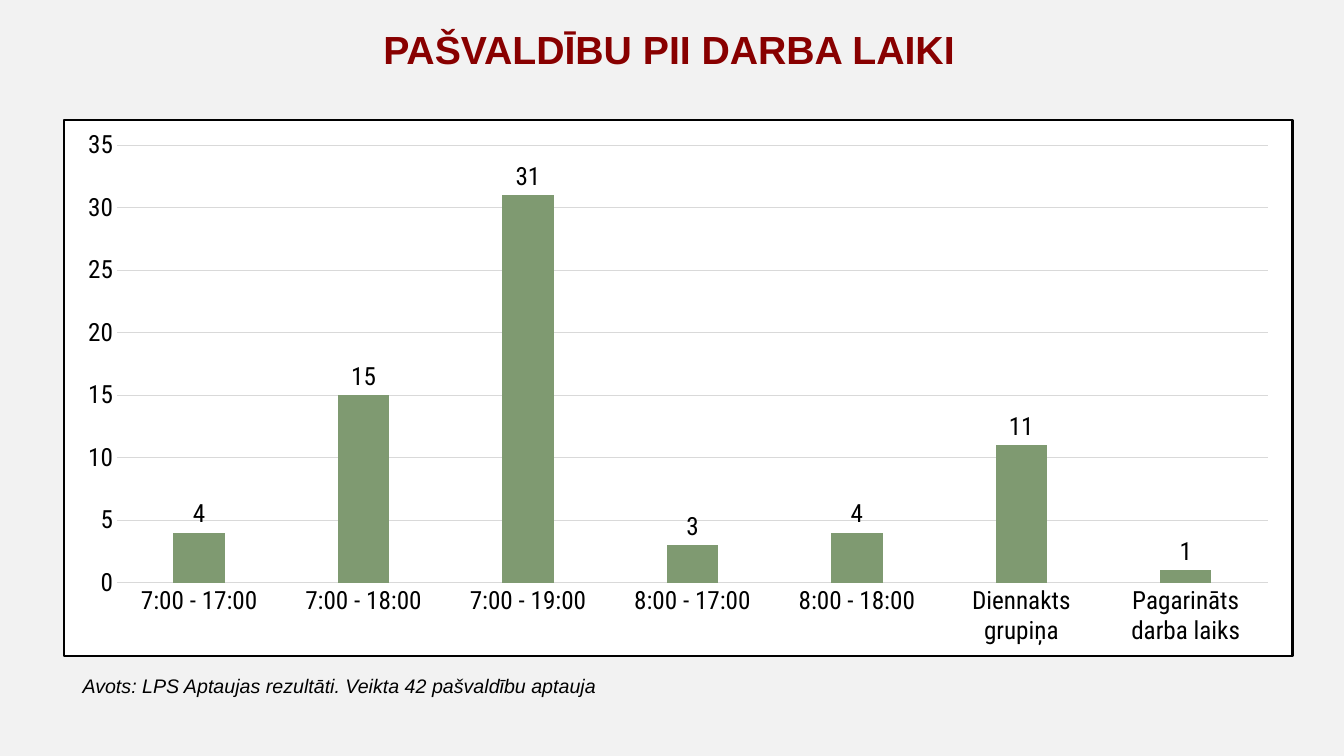
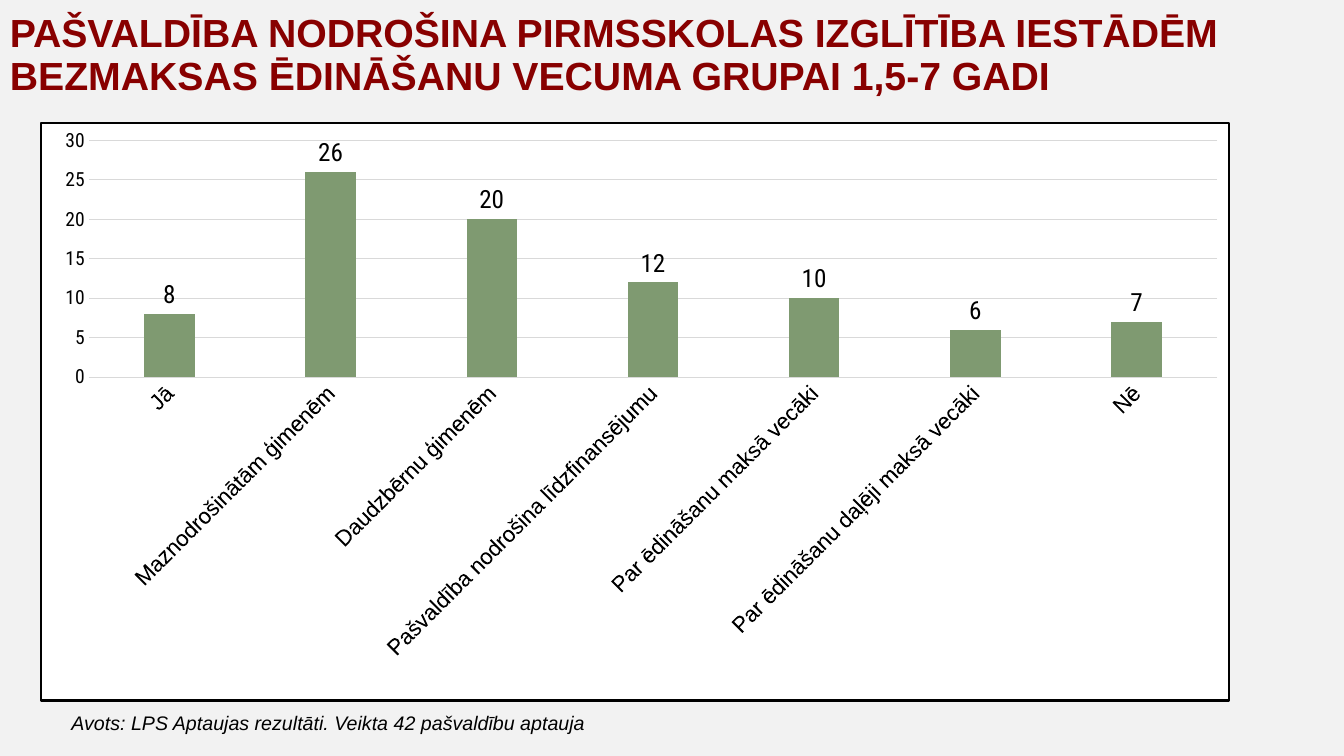
"""Build two slides of column charts on preschool survey results."""
from lxml import etree
from pptx import Presentation
from pptx.chart.data import CategoryChartData
from pptx.dml.color import RGBColor
from pptx.enum.chart import XL_CHART_TYPE, XL_LABEL_POSITION, XL_TICK_MARK
from pptx.enum.text import MSO_ANCHOR, PP_ALIGN
from pptx.oxml import parse_xml
from pptx.oxml.ns import nsdecls, qn
from pptx.util import Inches, Pt

BACKGROUND = RGBColor(0xF2, 0xF2, 0xF2)
TITLE_RED = RGBColor(0x88, 0x00, 0x00)
BLACK = RGBColor(0x00, 0x00, 0x00)
GRID_GRAY = RGBColor(0xD9, 0xD9, 0xD9)
BAR_GREEN = RGBColor(0x7F, 0x9A, 0x71)

TEXT_FONT = "Arial"
CHART_FONT = "Roboto Condensed"
CLUSTERED = XL_CHART_TYPE.COLUMN_CLUSTERED
OUTSIDE_END = XL_LABEL_POSITION.OUTSIDE_END
NO_TICK = XL_TICK_MARK.NONE
LEFT, CENTER = PP_ALIGN.LEFT, PP_ALIGN.CENTER
TOP = MSO_ANCHOR.TOP

SOURCE_NOTE = "Avots: LPS Aptaujas rezultāti. Veikta 42 pašvaldību aptauja"
WORKING_HOURS = {
    "7:00 - 17:00": 4,
    "7:00 - 18:00": 15,
    "7:00 - 19:00": 31,
    "8:00 - 17:00": 3,
    "8:00 - 18:00": 4,
    "Diennakts grupiņa": 11,
    "Pagarināts darba laiks": 1,
}
FREE_MEALS = {
    "Jā": 8,
    "Maznodrošinātām ģimenēm": 26,
    "Daudzbērnu ģimenēm": 20,
    "Pašvaldība nodrošina līdzfinansējumu": 12,
    "Par ēdināšanu maksā vecāki": 10,
    "Par ēdināšanu daļēji maksā vecāki": 6,
    "Nē": 7,
}


def style_font(font, size, name, color=BLACK):
    font.size = Pt(size)
    font.name = name
    font.color.rgb = color


def add_text(slide, box, text, size, color=BLACK, alignment=LEFT):
    shape = slide.shapes.add_textbox(*map(Inches, box))
    text_frame = shape.text_frame
    text_frame.word_wrap = True
    text_frame.vertical_anchor = TOP
    text_frame.text = text
    paragraph = text_frame.paragraphs[0]
    paragraph.alignment = alignment
    style_font(paragraph.runs[0].font, size, TEXT_FONT, color)
    return paragraph


def add_title(slide, box, text, alignment=LEFT):
    paragraph = add_text(slide, box, text, 28, TITLE_RED, alignment)
    paragraph.line_spacing = 0.9
    paragraph.runs[0].font.bold = True


def add_source_note(slide, box):
    paragraph = add_text(slide, box, SOURCE_NOTE, 14)
    paragraph.runs[0].font.italic = True


def frame_chart(chart):
    frame = parse_xml(
        f'<c:spPr {nsdecls("c", "a")}>'
        '<a:solidFill><a:srgbClr val="FFFFFF"/></a:solidFill>'
        f'<a:ln w="{Pt(1.5)}"><a:solidFill><a:srgbClr val="{BLACK}"/></a:solidFill></a:ln>'
        "</c:spPr>"
    )
    chart.element.find(qn("c:chart")).addnext(frame)


def place_plot(chart, plot_box):
    plot_area = chart.element.find(qn("c:chart")).find(qn("c:plotArea"))
    for old_layout in plot_area.findall(qn("c:layout")):
        plot_area.remove(old_layout)
    layout = parse_xml(f'<c:layout {nsdecls("c")}><c:manualLayout/></c:layout>')
    settings = [("layoutTarget", "inner"), ("xMode", "edge"), ("yMode", "edge")]
    settings += zip("xywh", plot_box)
    for tag, value in settings:
        etree.SubElement(layout[0], qn(f"c:{tag}")).set("val", str(value))
    plot_area.insert(0, layout)


def style_axes(chart, maximum, category_font, value_size, rotation):
    category_axis, value_axis = chart.category_axis, chart.value_axis
    for axis in (category_axis, value_axis):
        axis.major_tick_mark = axis.minor_tick_mark = NO_TICK
    style_font(category_axis.tick_labels.font, *category_font)
    style_font(value_axis.tick_labels.font, value_size, CHART_FONT)
    value_axis.minimum_scale = 0
    value_axis.maximum_scale = maximum
    value_axis.major_unit = 5
    value_axis.format.line.fill.background()
    for line in (category_axis.format.line, value_axis.major_gridlines.format.line):
        line.color.rgb = GRID_GRAY
        line.width = Pt(0.75)
    if rotation:
        body = category_axis._element.find(qn("c:txPr")).find(qn("a:bodyPr"))
        body.set("rot", str(rotation * 60000))
        body.set("vert", "horz")


def add_column_chart(slide, box, values, maximum, category_font, value_size,
                     rotation=0, plot_box=None):
    data = CategoryChartData()
    data.categories = list(values)
    data.add_series("Series 1", list(values.values()))
    chart = slide.shapes.add_chart(CLUSTERED, *map(Inches, box), data).chart
    chart.has_title = False
    chart.has_legend = False
    style_font(chart.font, 10, CHART_FONT)
    frame_chart(chart)
    if plot_box:
        place_plot(chart, plot_box)
    style_axes(chart, maximum, category_font, value_size, rotation)

    plot = chart.plots[0]
    plot.gap_width = 219
    plot.overlap = -27
    plot.vary_by_categories = False
    fill = plot.series[0].format.fill
    fill.solid()
    fill.fore_color.rgb = BAR_GREEN
    plot.has_data_labels = True
    labels = plot.data_labels
    labels.show_value = True
    labels.position = OUTSIDE_END
    style_font(labels.font, 18, CHART_FONT)


def add_working_hours_slide(presentation):
    slide = presentation.slides.add_slide(presentation.slide_layouts[6])
    add_title(slide, (0.91, 0.25, 11.45, 0.69), "PAŠVALDĪBU PII DARBA LAIKI", CENTER)
    add_column_chart(slide, (0.62, 1.18, 12.21, 5.34), WORKING_HOURS, 35,
                     (18, CHART_FONT), 18)
    add_source_note(slide, (0.72, 6.64, 6.05, 0.34))


def add_free_meals_slide(presentation):
    slide = presentation.slides.add_slide(presentation.slide_layouts[6])
    add_title(slide, (0, 0.09, 13.51, 1.26),
              "PAŠVALDĪBA NODROŠINA PIRMSSKOLAS IZGLĪTĪBA IESTĀDĒM "
              "BEZMAKSAS ĒDINĀŠANU VECUMA GRUPAI 1,5-7 GADI")
    add_column_chart(slide, (0.4, 1.21, 11.8, 5.75), FREE_MEALS, 30,
                     (16, TEXT_FONT), 14, rotation=-45,
                     plot_box=(0.04, 0.03, 0.95, 0.41))
    add_source_note(slide, (0.61, 7, 6.81, 0.34))


def main():
    presentation = Presentation()
    presentation.slide_width = Inches(13.33)
    presentation.slide_height = Inches(7.5)
    background = presentation.slide_master.background.fill
    background.solid()
    background.fore_color.rgb = BACKGROUND
    add_working_hours_slide(presentation)
    add_free_meals_slide(presentation)
    presentation.save("out.pptx")


if __name__ == "__main__":
    main()
